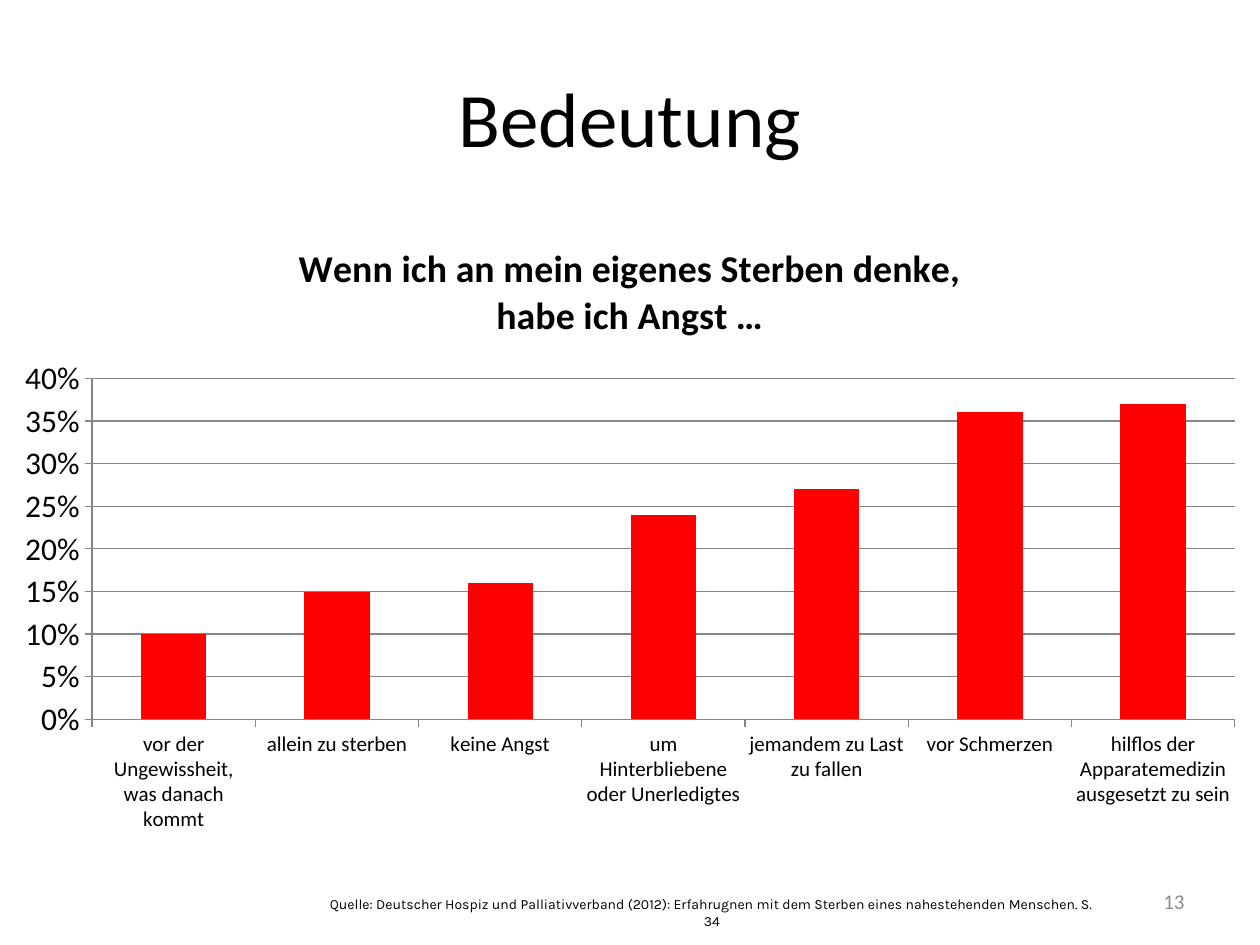
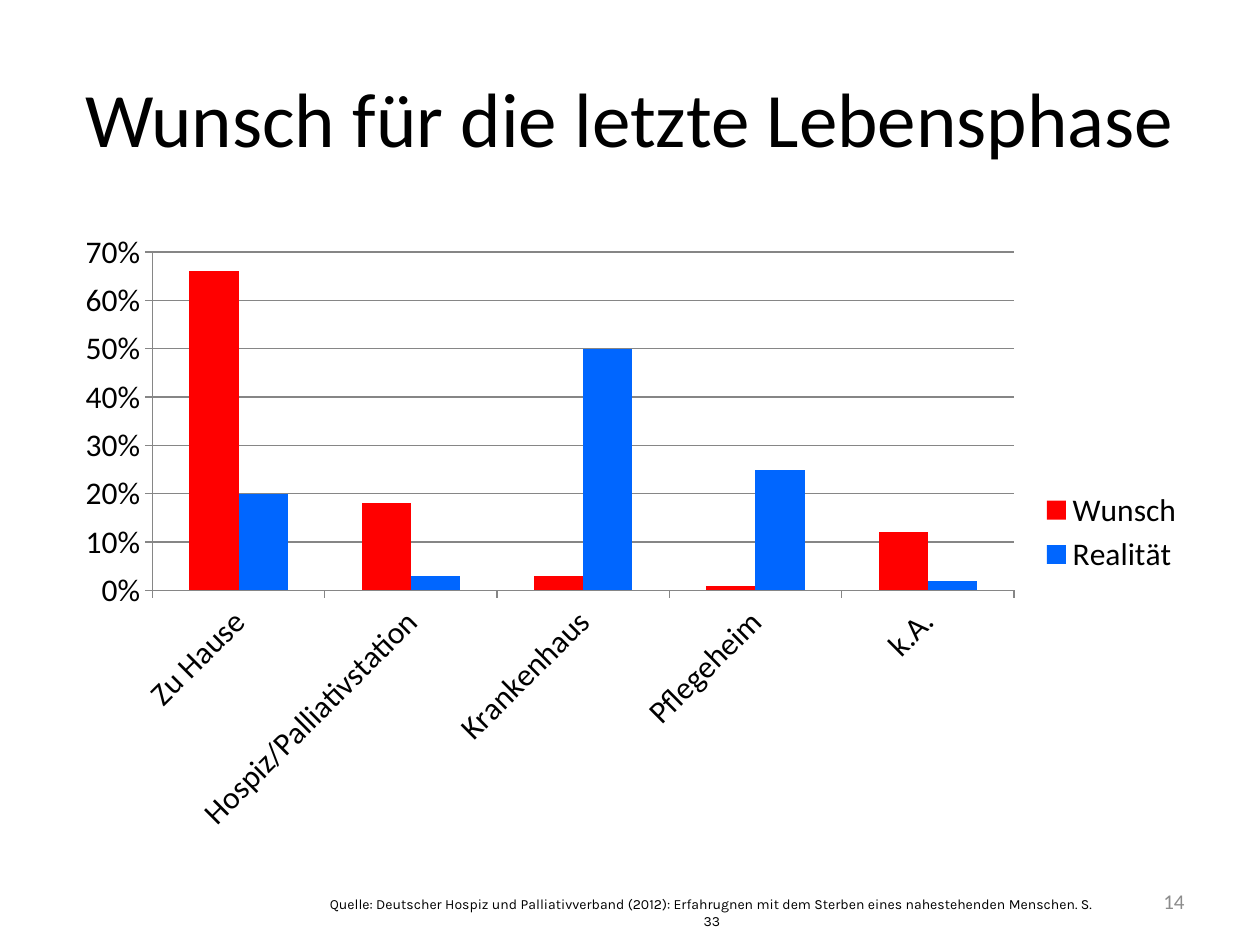
from dataclasses import dataclass

from pptx import Presentation
from pptx.chart.data import CategoryChartData
from pptx.dml.color import RGBColor as Rgb
from pptx.enum.chart import XL_CHART_TYPE as ChartType, XL_LEGEND_POSITION as LegendPosition
from pptx.enum.chart import XL_TICK_MARK as TickMark
from pptx.enum.text import MSO_ANCHOR as Anchor, MSO_AUTO_SIZE as AutoSize, PP_ALIGN as Align
from pptx.oxml.ns import qn
from pptx.util import Inches, Pt


@dataclass(frozen=True)
class Theme:
    font: str = "Calibri"
    source_font: str = "Karla"
    text: Rgb = Rgb(0, 0, 0)
    muted: Rgb = Rgb(0x8C, 0x8C, 0x8C)
    grid: Rgb = Rgb(0x86, 0x86, 0x86)
    red: Rgb = Rgb(0xFF, 0, 0)
    blue: Rgb = Rgb(0, 0x66, 0xFF)
    title_size: float = 44
    chart_title_size: float = 21.6
    chart_size: float = 18
    small_size: float = 12
    source_size: float = 8


THEME = Theme()
TITLE_ONLY = 5
SOURCE = ("Quelle: Deutscher Hospiz und Palliativverband (2012): "
          "Erfahrugnen mit dem Sterben eines nahestehenden Menschen. S. ")


def set_font(font, size, color=THEME.text, name=THEME.font, bold=False):
    font.name = name
    font.size = Pt(size)
    font.bold = bold
    font.color.rgb = color


def place(shape, left, top, width, height):
    shape.left, shape.top = Inches(left), Inches(top)
    shape.width, shape.height = Inches(width), Inches(height)


def add_text(page, text, at, align, anchor, **font):
    box = page.shapes.add_textbox(*map(Inches, at))
    frame = box.text_frame
    frame.word_wrap = True
    frame.vertical_anchor = anchor
    frame.text = text
    para = frame.paragraphs[0]
    para.alignment = align
    set_font(para.font, **font)
    return box


def add_page(deck, title, number, source_page):
    """Add a slide with the shared title, page number and source line."""
    page = deck.slides.add_slide(deck.slide_layouts[TITLE_ONLY])
    heading = page.shapes.title
    place(heading, 0.5, 0.3, 9, 1.25)
    frame = heading.text_frame
    frame.text = title
    frame.vertical_anchor = Anchor.MIDDLE
    frame.paragraphs[0].alignment = Align.CENTER
    set_font(frame.paragraphs[0].font, THEME.title_size)

    add_text(page, str(number), (7.17, 6.95, 2.33, 0.4), Align.RIGHT, Anchor.MIDDLE,
             size=THEME.small_size, color=THEME.muted)
    source = add_text(page, f"{SOURCE}{source_page}", (2.47, 7.06, 6.36, 0.24),
                      Align.CENTER, Anchor.TOP,
                      size=THEME.source_size, name=THEME.source_font)
    source.text_frame.auto_size = AutoSize.SHAPE_TO_FIT_TEXT
    return page


def style_line(line):
    line.color.rgb = THEME.grid
    line.width = Pt(0.75)


def style_axes(chart, maximum, step, label_size, label_angle):
    values, categories = chart.value_axis, chart.category_axis
    values.minimum_scale, values.maximum_scale, values.major_unit = 0, maximum, step
    values.has_major_gridlines = True
    style_line(values.major_gridlines.format.line)
    values.tick_labels.number_format = "0%"
    values.tick_labels.number_format_is_linked = False
    categories.has_major_gridlines = False
    for axis, size in ((values, THEME.chart_size), (categories, label_size)):
        axis.major_tick_mark = TickMark.OUTSIDE
        axis.minor_tick_mark = TickMark.NONE
        style_line(axis.format.line)
        set_font(axis.tick_labels.font, size)
    label_body = chart.element.find(
        f".//{qn('c:catAx')}/{qn('c:txPr')}/{qn('a:bodyPr')}")
    label_body.set("rot", str(label_angle * 60000))
    label_body.set("vert", "horz")


def add_column_chart(page, at, categories, series, maximum, step,
                     label_size=THEME.chart_size, label_angle=0):
    """Add clustered columns; series maps a name to its values and colour."""
    data = CategoryChartData(number_format="0%")
    data.categories = categories
    for name, (values, _) in series.items():
        data.add_series(name, values)
    chart = page.shapes.add_chart(
        ChartType.COLUMN_CLUSTERED, *map(Inches, at), data).chart
    set_font(chart.font, THEME.chart_size)
    chart.has_title = False
    chart.has_legend = False

    plot = chart.plots[0]
    plot.gap_width = 150
    plot.overlap = 0
    plot.vary_by_categories = False
    for columns, (_, color) in zip(plot.series, series.values()):
        columns.format.fill.solid()
        columns.format.fill.fore_color.rgb = color
    style_axes(chart, maximum, step, label_size, label_angle)
    return chart


def add_chart_title(chart, text):
    chart.has_title = True
    chart.chart_title.include_in_layout = False
    frame = chart.chart_title.text_frame
    frame.text = text
    for para in frame.paragraphs:
        set_font(para.font, THEME.chart_title_size, bold=True)


def add_legend(chart):
    chart.has_legend = True
    chart.legend.position = LegendPosition.RIGHT
    chart.legend.include_in_layout = False
    set_font(chart.legend.font, THEME.chart_size)


def add_fears_page(deck):
    page = add_page(deck, "Bedeutung", 13, 34)
    fears = {
        "vor der Ungewissheit, was danach kommt": 0.10,
        "allein zu sterben": 0.15,
        "keine Angst": 0.16,
        "um Hinterbliebene oder Unerledigtes": 0.24,
        "jemandem zu Last zu fallen": 0.27,
        "vor Schmerzen": 0.36,
        "hilflos der Apparatemedizin ausgesetzt zu sein": 0.37,
    }
    chart = add_column_chart(
        page, (0, 1.75, 10, 4.95), list(fears),
        {"Series 1": (list(fears.values()), THEME.red)},
        maximum=0.4, step=0.05, label_size=THEME.small_size)
    add_chart_title(chart, "Wenn ich an mein eigenes Sterben denke,\nhabe ich Angst …")


def add_wishes_page(deck):
    page = add_page(deck, "Wunsch für die letzte Lebensphase", 14, 33)
    chart = add_column_chart(
        page, (0.5, 1.75, 9, 4.95),
        ["Zu Hause", "Hospiz/Palliativstation", "Krankenhaus", "Pflegeheim", "k.A."],
        {"Wunsch": ([0.66, 0.18, 0.03, 0.01, 0.12], THEME.red),
         "Realität": ([0.20, 0.03, 0.50, 0.25, 0.02], THEME.blue)},
        maximum=0.7, step=0.1, label_angle=-45)
    add_legend(chart)


def main():
    deck = Presentation()
    deck.slide_width, deck.slide_height = Inches(10), Inches(7.5)
    add_fears_page(deck)
    add_wishes_page(deck)
    deck.save("out.pptx")


if __name__ == "__main__":
    main()
